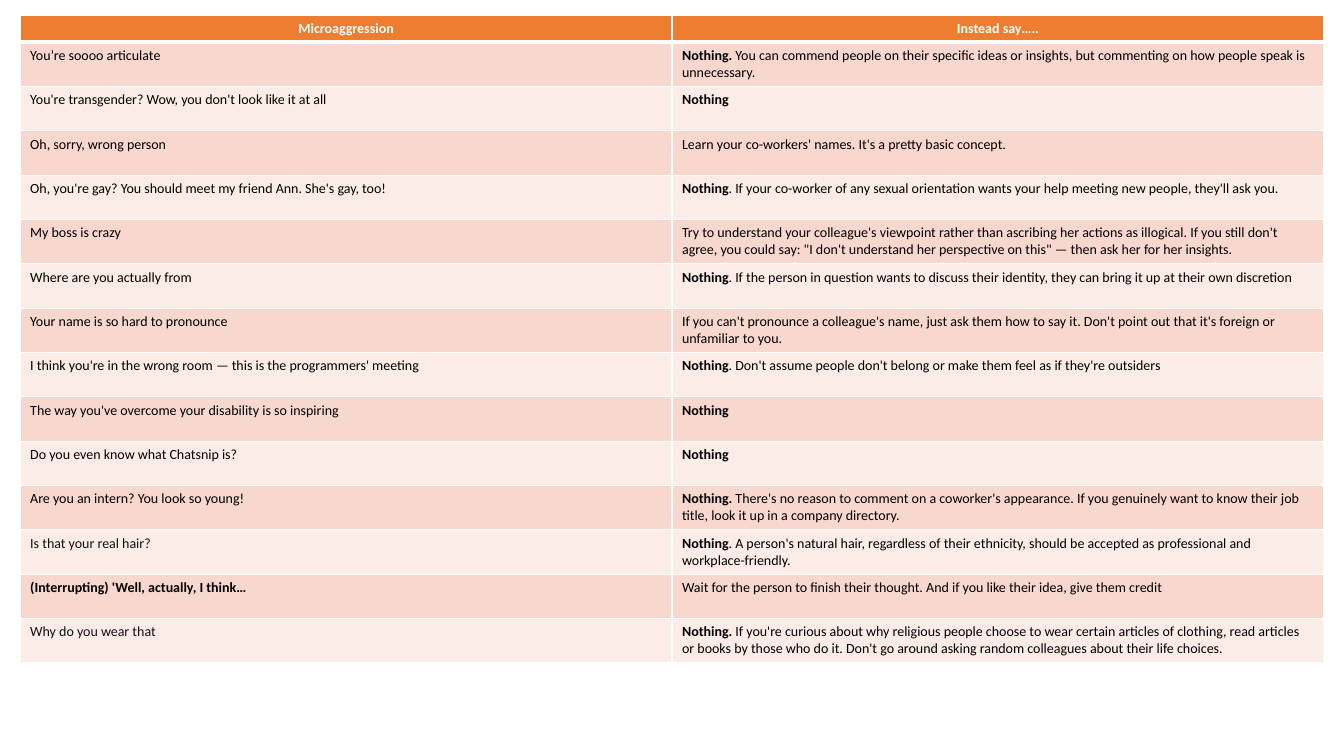
"""Build a one-slide table of microaggressions and what to say instead."""
import pptx
import pptx.dml.color
import pptx.enum.text
import pptx.oxml
import pptx.oxml.ns
import pptx.util

HEADINGS = ("Microaggression", "Instead say…..")
# Each cell is (bold lead, regular text).
ROWS = [
    (("", "You’re soooo articulate"),
     ("Nothing. ", "You can commend people on their specific ideas or insights, but commenting on how people speak is unnecessary.")),
    (("", "You're transgender? Wow, you don't look like it at all"),
     ("Nothing", "")),
    (("", "Oh, sorry, wrong person"),
     ("", "Learn your co-workers' names. It's a pretty basic concept.")),
    (("", "Oh, you're gay? You should meet my friend Ann. She's gay, too!"),
     ("Nothing", ". If your co-worker of any sexual orientation wants your help meeting new people, they'll ask you.")),
    (("", "My boss is crazy"),
     ("", "Try to understand your colleague's viewpoint rather than ascribing her actions as illogical. If you still don't agree, you could say: \"I don't understand her perspective on this\" — then ask her for her insights.")),
    (("", "Where are you actually from"),
     ("Nothing", ". If the person in question wants to discuss their identity, they can bring it up at their own discretion")),
    (("", "Your name is so hard to pronounce"),
     ("", "If you can't pronounce a colleague's name, just ask them how to say it. Don't point out that it's foreign or unfamiliar to you.")),
    (("", "I think you're in the wrong room — this is the programmers' meeting"),
     ("Nothing", ". Don't assume people don't belong or make them feel as if they're outsiders")),
    (("", "The way you've overcome your disability is so inspiring"),
     ("Nothing", "")),
    (("", "Do you even know what Chatsnip is?"),
     ("Nothing", "")),
    (("", "Are you an intern? You look so young!"),
     ("Nothing. ", "There's no reason to comment on a coworker's appearance. If you genuinely want to know their job title, look it up in a company directory.")),
    (("", "Is that your real hair?"),
     ("Nothing", ". A person's natural hair, regardless of their ethnicity, should be accepted as professional and workplace-friendly.")),
    (("(Interrupting) 'Well, actually, I think…", ""),
     ("", "Wait for the person to finish their thought. And if you like their idea, give them credit")),
    (("", "Why do you wear that"),
     ("Nothing. ", "If you're curious about why religious people choose to wear certain articles of clothing, read articles or books by those who do it. Don't go around asking random colleagues about their life choices.")),
]
GRAY_QUESTIONS = ("Is that your real hair?", "Why do you wear that")

WHITE = pptx.dml.color.RGBColor(0xFF, 0xFF, 0xFF)
BLACK = pptx.dml.color.RGBColor(0x00, 0x00, 0x00)
NEAR_BLACK = pptx.dml.color.RGBColor(0x11, 0x11, 0x11)
ORANGE = pptx.dml.color.RGBColor(0xED, 0x7D, 0x31)
BANDS = (pptx.dml.color.RGBColor(0xF8, 0xD7, 0xCE),
         pptx.dml.color.RGBColor(0xFC, 0xEC, 0xE8))

SLIDE_WIDTH, SLIDE_HEIGHT = 13.33, 7.5
LEFT, TOP = 0.2, 0.15
HEADER_HEIGHT, ROW_HEIGHT = 0.26, 0.44


def add_text(para, text, *, color=BLACK, bold=False, size=10):
    span = para.add_run()
    span.text = text
    span.font.name = "Calibri"
    span.font.size = pptx.util.Pt(size)
    span.font.bold = bold
    span.font.color.rgb = color


def style_cell(cell, fill, borders):
    cell.fill.solid()
    cell.fill.fore_color.rgb = fill
    properties = cell._tc.get_or_add_tcPr()
    for place, (side, points) in enumerate(borders.items()):
        properties.insert(place, pptx.oxml.parse_xml(
            f'<a:ln{side} {pptx.oxml.ns.nsdecls("a")} w="{pptx.util.Pt(points)}">'
            f'<a:solidFill><a:srgbClr val="{WHITE}"/></a:solidFill></a:ln{side}>'))


def main():
    deck = pptx.Presentation()
    deck.slide_width = pptx.util.Inches(SLIDE_WIDTH)
    deck.slide_height = pptx.util.Inches(SLIDE_HEIGHT)
    page = deck.slides.add_slide(deck.slide_layouts[6])
    heights = [HEADER_HEIGHT] + [ROW_HEIGHT] * len(ROWS)
    frame = page.shapes.add_table(
        len(heights), len(HEADINGS),
        *map(pptx.util.Inches, (LEFT, TOP, SLIDE_WIDTH - 2 * LEFT, sum(heights))))
    table = frame.table
    for row, height in zip(table.rows, heights):
        row.height = pptx.util.Inches(height)

    for column, heading in enumerate(HEADINGS):
        cell = table.cell(0, column)
        style_cell(cell, ORANGE, {"L": 1, "R": 1, "T": 1, "B": 3})
        para = cell.text_frame.paragraphs[0]
        para.alignment = pptx.enum.text.PP_ALIGN.CENTER
        add_text(para, heading, color=WHITE, bold=True)

    for index, entry in enumerate(ROWS):
        for column, (lead, text) in enumerate(entry):
            cell = table.cell(index + 1, column)
            style_cell(cell, BANDS[index % 2], {"L": 1, "R": 1, "B": 1})
            para = cell.text_frame.paragraphs[0]
            if lead:
                add_text(para, lead, bold=True)
            if text:
                color = NEAR_BLACK if text in GRAY_QUESTIONS else BLACK
                add_text(para, text, color=color)

    deck.save("out.pptx")


if __name__ == "__main__":
    main()
